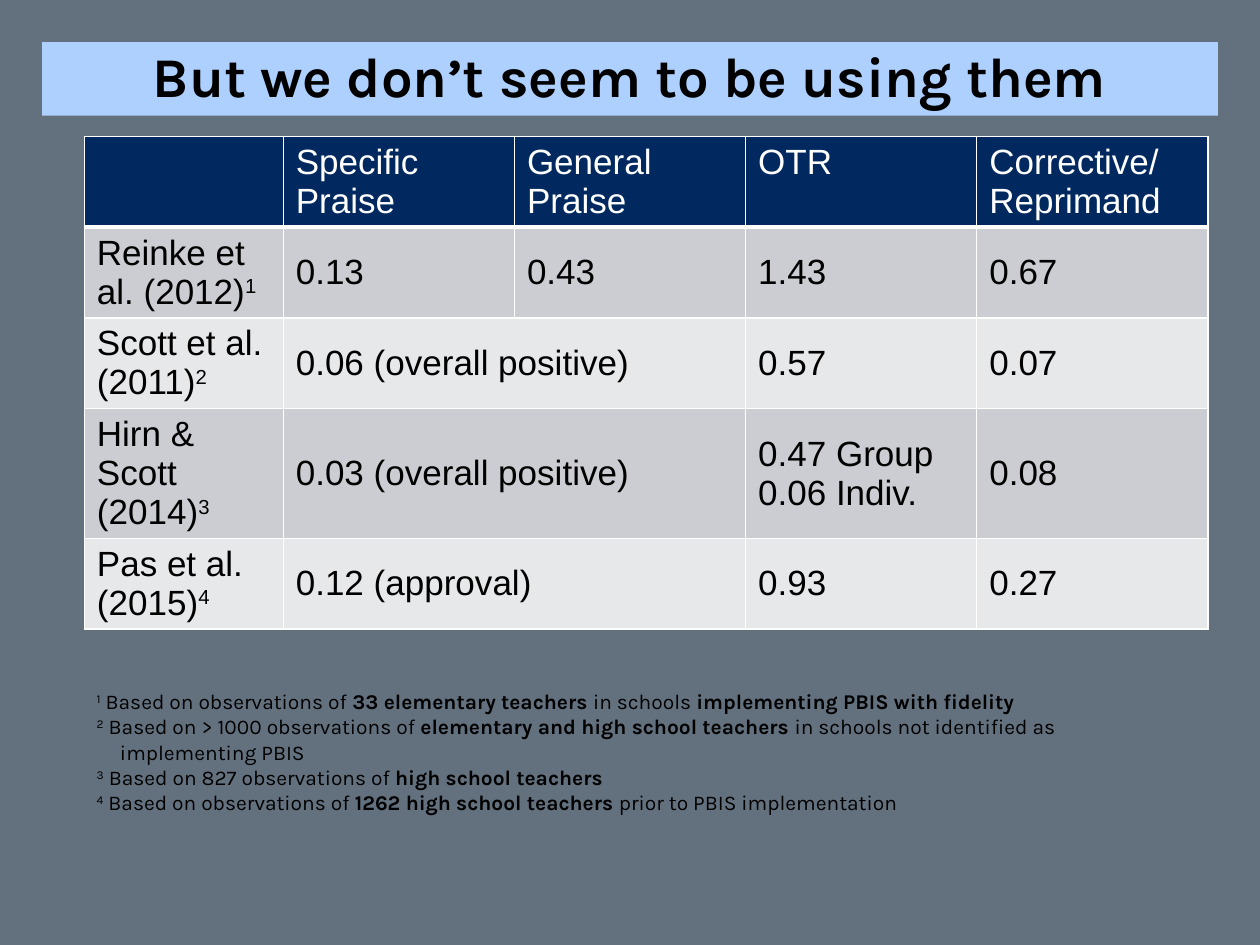
import pptx
import pptx.dml.color
import pptx.enum.text
import pptx.oxml
import pptx.oxml.ns
import pptx.util

Cm = pptx.util.Cm
Pt = pptx.util.Pt
RGB = pptx.dml.color.RGBColor
Anchor = pptx.enum.text.MSO_ANCHOR

SLATE = RGB(0x63, 0x71, 0x7F)
SKY = RGB(0xAD, 0xD0, 0xFE)
NAVY = RGB(0x01, 0x29, 0x5F)
BANDS = RGB(0xCC, 0xCD, 0xD2), RGB(0xE7, 0xE8, 0xEA)
BLACK = RGB(0, 0, 0)
WHITE = RGB(255, 255, 255)

HEADS = ["", "Specific Praise", "General Praise", "OTR", "Corrective/Reprimand"]
# None continues the cell to its left
STUDIES = [
    ["Reinke et al. (2012)", "0.13", "0.43", "1.43", "0.67"],
    ["Scott et al. (2011)", "0.06 (overall positive)", None, "0.57", "0.07"],
    ["Hirn & Scott (2014)", "0.03 (overall positive)", None,
     "0.47 Group\n0.06 Indiv.", "0.08"],
    ["Pas et al. (2015)", "0.12 (approval)", None, "0.93", "0.27"],
]
# Every second part is bold
NOTES = [
    [" Based on observations of", " 33 elementary teachers ", "in schools ",
     "implementing PBIS with fidelity"],
    [" Based on > 1000 observations of ", "elementary and high school teachers ",
     "in schools not identified as implementing PBIS"],
    [" Based on 827 observations of ", "high school teachers"],
    [" Based on observations of ", "1262 high school teachers ",
     "prior to PBIS implementation"],
]


class Deck:
    """Holds the fonts and the current slide."""
    face = "Karla"
    grid = "Arial"

    def __init__(self):
        self.file = pptx.Presentation()
        self.file.slide_width = Cm(25.4)
        self.file.slide_height = Cm(19.05)
        self.slide = self.file.slides.add_slide(self.file.slide_layouts[5])
        fill = self.slide.background.fill
        fill.solid()
        fill.fore_color.rgb = SLATE

    def style(self, run, face, size, color, bold=False):
        font = run.font
        font.name, font.size, font.bold = face, Pt(size), bold
        font.color.rgb = color

    def mark(self, para, text, face, size):
        """Add a superscript number."""
        run = para.add_run()
        run.text = text
        self.style(run, face, size, BLACK)
        run.font._element.set("baseline", "30000")

    def title(self, text):
        shape = self.slide.shapes.title
        shape.left, shape.top = Cm(0.85), Cm(0.85)
        shape.width, shape.height = Cm(23.7), Cm(1.48)
        shape.fill.solid()
        shape.fill.fore_color.rgb = SKY
        frame = shape.text_frame
        frame.text = text
        frame.vertical_anchor = Anchor.MIDDLE
        para = frame.paragraphs[0]
        para.alignment = pptx.enum.text.PP_ALIGN.CENTER
        para.line_spacing = 0.9
        self.style(para.runs[0], self.face, 32, BLACK, True)

    def border(self, cell, base):
        """Draw white cell edges, the bottom one base points wide."""
        props = cell._tc.get_or_add_tcPr()
        widths = {"L": 1, "R": 1, "T": 1, "B": base}
        for place, (side, width) in enumerate(widths.items()):
            line = pptx.oxml.parse_xml(
                f'<a:ln{side} {pptx.oxml.ns.nsdecls("a")} w="{Pt(width)}">'
                f'<a:solidFill><a:srgbClr val="{WHITE}"/></a:solidFill></a:ln{side}>')
            props.insert(place, line)

    def cell(self, cell, text, fill, color, base=1):
        cell.fill.solid()
        cell.fill.fore_color.rgb = fill
        self.border(cell, base)
        cell.text_frame.text = text or ""
        for para in cell.text_frame.paragraphs:
            for run in para.runs:
                self.style(run, self.grid, 20, color)

    def table(self, heads, rows):
        table = self.slide.shapes.add_table(
            len(rows) + 1, len(heads), Cm(1.7), Cm(2.75), Cm(22.65), Cm(8.96)).table
        for col, column in enumerate(table.columns):
            column.width = Cm(4.66 if col else 4.01)
        for line in table.rows:
            line.height = Cm(1.65)
        table.rows[3].height = Cm(2.36)
        for col, text in enumerate(heads):
            self.cell(table.cell(0, col), text, NAVY, WHITE, 3)
        for row, texts in enumerate(rows, 1):
            for col, text in enumerate(texts):
                cell = table.cell(row, col)
                self.cell(cell, text, BANDS[(row - 1) % 2], BLACK)
                if col:
                    cell.vertical_anchor = Anchor.MIDDLE
                else:
                    self.mark(cell.text_frame.paragraphs[0], str(row), self.grid, 20)
                if text is None:
                    table.cell(row, col - 1).merge(cell)

    def notes(self, items):
        box = self.slide.shapes.add_textbox(Cm(1.7), Cm(13.76), Cm(22.65), Cm(2.31))
        frame = box.text_frame
        frame.word_wrap = True
        frame.auto_size = pptx.enum.text.MSO_AUTO_SIZE.SHAPE_TO_FIT_TEXT
        for num, parts in enumerate(items, 1):
            para = frame.paragraphs[0] if num == 1 else frame.add_paragraph()
            props = para._p.get_or_add_pPr()
            props.set("marL", str(Cm(0.47)))
            props.set("indent", str(-Cm(0.47)))
            self.mark(para, str(num), self.face, 12)
            for place, text in enumerate(parts):
                run = para.add_run()
                run.text = text
                self.style(run, self.face, 12, BLACK, place % 2 == 1)


def main():
    deck = Deck()
    deck.title("But we don’t seem to be using them")
    deck.table(HEADS, STUDIES)
    deck.notes(NOTES)
    deck.file.save("out.pptx")


if __name__ == "__main__":
    main()
